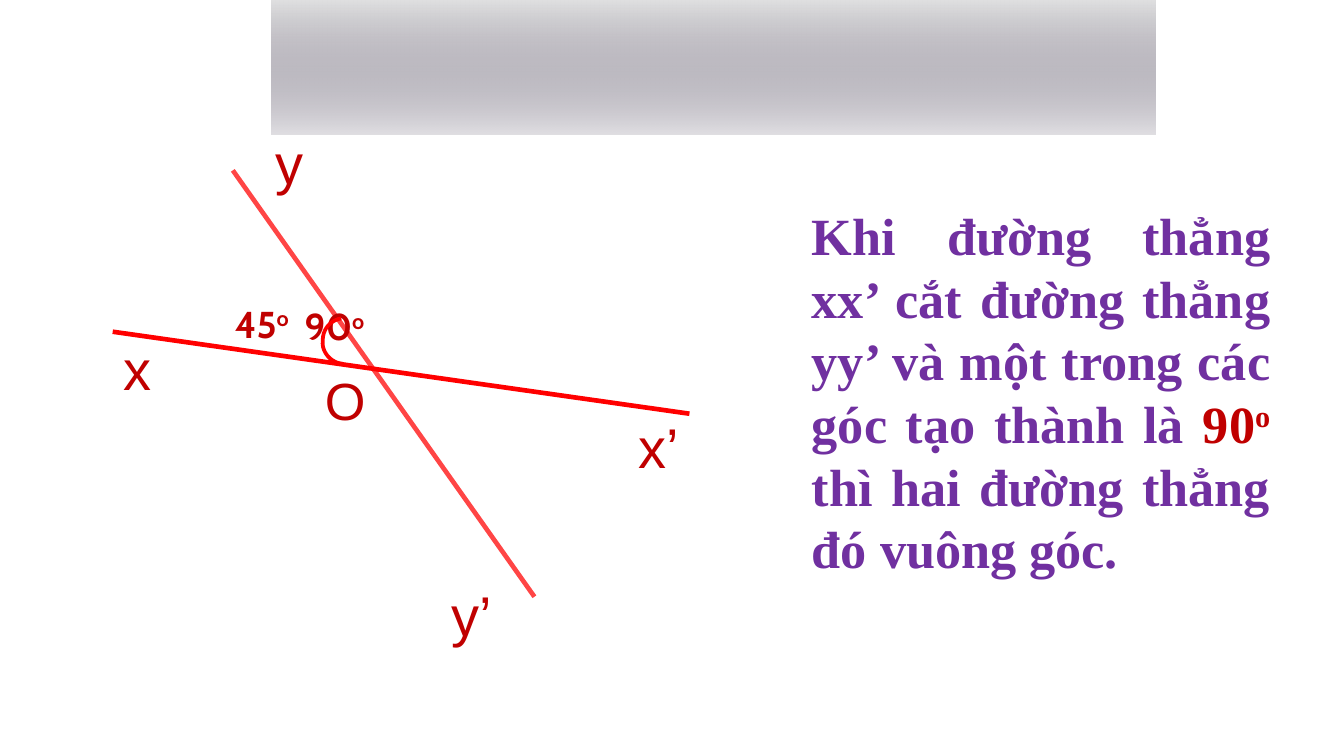
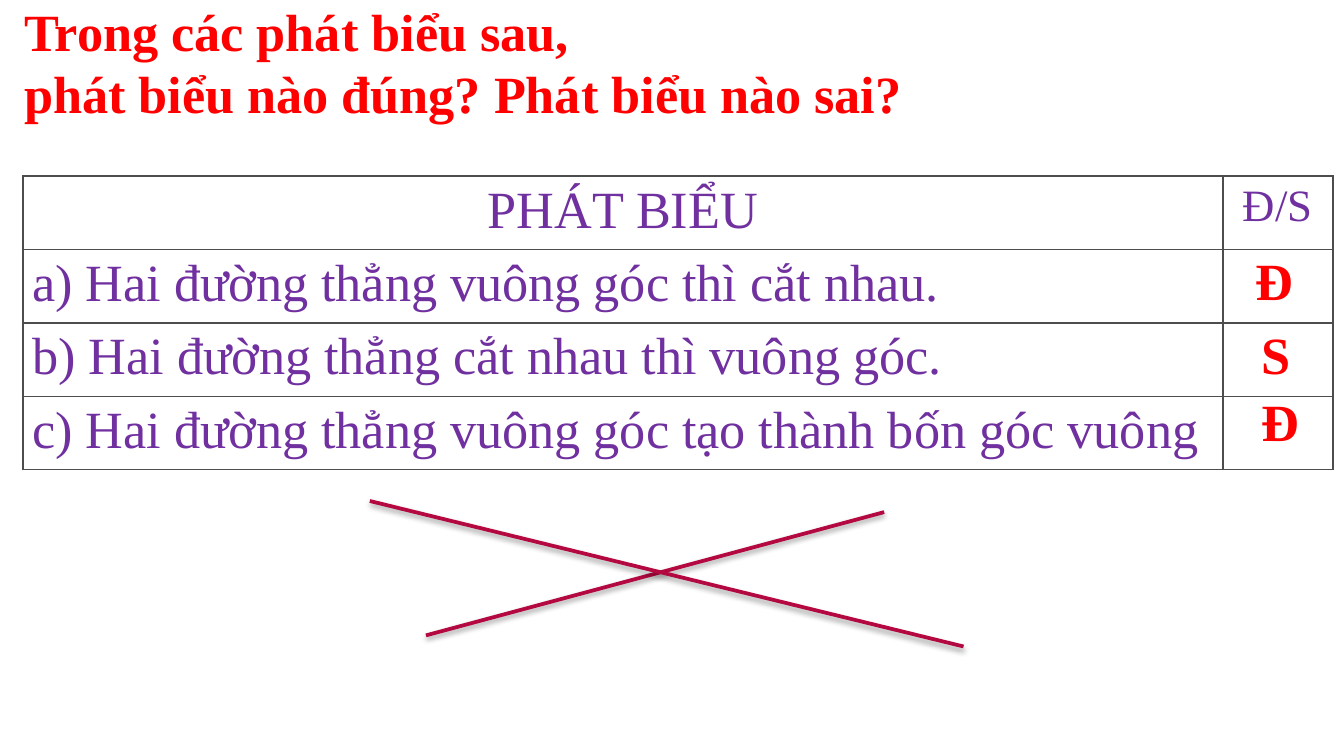
from lxml import etree
from pptx import Presentation
from pptx.dml.color import RGBColor
from pptx.enum.shapes import MSO_CONNECTOR, MSO_SHAPE
from pptx.enum.text import MSO_ANCHOR, MSO_AUTO_SIZE, PP_ALIGN
from pptx.oxml.ns import qn
from pptx.util import Cm, Pt

STRAIGHT = MSO_CONNECTOR.STRAIGHT
RECTANGLE = MSO_SHAPE.RECTANGLE
TOP = MSO_ANCHOR.TOP
GROW = MSO_AUTO_SIZE.SHAPE_TO_FIT_TEXT
LEFT, CENTER, JUSTIFY = PP_ALIGN.LEFT, PP_ALIGN.CENTER, PP_ALIGN.JUSTIFY

COLORS = {
    "red": "FF0000",
    "dark_red": "C00000",
    "purple": "7030A0",
    "crimson": "B40940",
    "border": "4D4D4D",
    "band_top": "E0E0E1",
    "band_bottom": "382E46",
    "shadow": "000000",
}
SERIF = "Times New Roman"
STYLES = {
    "axis": {"name": "Arial", "size": Pt(30), "color": "dark_red"},
    "origin": {"name": "Arial", "size": Pt(28), "color": "dark_red"},
    "angle": {"name": "Cabin", "size": Pt(20), "bold": True, "color": "dark_red"},
    "rule": {"name": SERIF, "size": Pt(28), "bold": True, "color": "purple"},
    "degree": {"name": SERIF, "size": Pt(28), "bold": True, "color": "dark_red"},
    "strong": {"name": SERIF, "size": Pt(28), "bold": True, "color": "red"},
    "cell": {"name": SERIF, "size": Pt(28), "color": "purple"},
    "cell_small": {"name": SERIF, "size": Pt(24), "color": "purple"},
}

LINE_YY = (4.4, 3.22, 10.1, 11.28)
LINE_XX = (2.13, 6.27, 13.03, 7.82)
POINT_LABELS = [
    ("x", "axis", (2.08, 6.2, 1.47, 1.52)),
    ("x’", "axis", (11.81, 7.67, 1.47, 1.52)),
    ("y", "axis", (4.95, 2.31, 1.47, 1.52)),
    ("y’", "axis", (8.28, 10.85, 1.45, 1.55)),
    ("O", "origin", (5.89, 6.83, 1.07, 1.45)),
]
ANGLE_LABELS = [("90", (5.51, 5.61, 1.9, 1.09)), ("45", (4.19, 5.56, 1.9, 1.09))]
ANGLE_CURVES = [
    ((6.48, 6.88), (6.25, 6.86), (6.07, 6.65), (6.1, 6.43)),
    ((6.1, 6.43), (6.1, 6.22), (6.25, 6.05), (6.45, 6.02)),
]
CURVE_STEPS = 10
RULE_BOX = (15.09, 3.71, 9.17, 7.44)
RULE = [
    ("Khi đường thẳng xx’ cắt đường thẳng yy’ và một trong các góc tạo thành là ", "rule", False),
    ("90", "degree", False),
    ("o ", "degree", True),
    ("thì hai đường thẳng đó vuông góc.", "rule", False),
]
BAND_BOX = (5.13, 0, 16.71, 2.54)

QUESTION_BOX = (0.2, -0.15, 19.69, 2.64)
QUESTION = ["Trong các phát biểu sau,", "phát biểu nào đúng? Phát biểu nào sai?"]
TABLE_AT = (0.43, 3.33)
COLUMN_WIDTHS = (22.68, 2.08)
ROW_HEIGHT = 1.38
HEADINGS = [("PHÁT BIỂU", "cell"), ("Đ/S", "cell_small")]
STATEMENTS = [
    "a) Hai đường thẳng vuông góc thì cắt nhau.",
    "b) Hai đường thẳng cắt nhau thì vuông góc.",
    "c) Hai đường thẳng vuông góc tạo thành bốn góc vuông",
]
ANSWERS = [
    ("Đ", (23.47, 4.57, 1.24, 1.45)),
    ("S", (23.6, 5.97, 1.07, 1.45)),
    ("Đ", (23.6, 7.24, 1.24, 1.45)),
]
CROSSED_LINES = [(8.05, 12.01, 16.71, 9.68), (6.99, 9.47, 18.21, 12.22)]


def rgb(color):
    return RGBColor.from_string(COLORS[color])


def lengths(values):
    return [Cm(value) for value in values]


def child(parent, tag, **attributes):
    return etree.SubElement(parent, qn(tag), {k: str(v) for k, v in attributes.items()})


def set_alpha(color_element, percent):
    child(color_element, "a:alpha", val=percent * 1000)


def add_run(paragraph, text, style, raised=False):
    run = paragraph.add_run()
    run.text = text
    for key, value in STYLES[style].items():
        if key == "color":
            run.font.color.rgb = rgb(value)
        else:
            setattr(run.font, key, value)
    if raised:
        run._r.get_or_add_rPr().set("baseline", "30000")


def add_label(slide, box, parts, wrap=True):
    frame = slide.shapes.add_textbox(*lengths(box)).text_frame
    frame.word_wrap = wrap
    frame.auto_size = GROW
    for part in parts:
        add_run(frame.paragraphs[0], *part)


def fill_placeholder(placeholder, box, paragraphs, alignment):
    for key, value in zip(("left", "top", "width", "height"), lengths(box)):
        setattr(placeholder, key, value)
    frame = placeholder.text_frame
    frame.word_wrap = True
    frame.auto_size = GROW
    frame.vertical_anchor = TOP
    for index, parts in enumerate(paragraphs):
        paragraph = frame.add_paragraph() if index else frame.paragraphs[0]
        paragraph.alignment = alignment
        paragraph.space_before = Pt(0)
        properties = paragraph._p.get_or_add_pPr()
        properties.set("marL", "0")
        properties.set("indent", "0")
        child(properties, "a:buNone")
        for part in parts:
            add_run(paragraph, *part)


def add_line(slide, ends, color, width, opacity=None, shadow=False):
    connector = slide.shapes.add_connector(STRAIGHT, *lengths(ends))
    connector.line.color.rgb = rgb(color)
    connector.line.width = Pt(width)
    properties = connector.element.spPr
    if opacity:
        set_alpha(next(properties.iter(qn("a:srgbClr"))), opacity)
    effects = child(properties, "a:effectLst")
    if shadow:
        outer = child(effects, "a:outerShdw", blurRad=Pt(3.1), dist=Pt(1.6),
                      dir=90 * 60000, rotWithShape=0)
        set_alpha(child(outer, "a:srgbClr", val=COLORS["shadow"]), 38)


def curve_point(curve, t):
    weights = ((1 - t) ** 3, 3 * t * (1 - t) ** 2, 3 * t ** 2 * (1 - t), t ** 3)
    return tuple(Cm(sum(w * point[axis] for w, point in zip(weights, curve)))
                 for axis in (0, 1))


def add_angle_mark(slide):
    points = [curve_point(curve, step / CURVE_STEPS)
              for curve in ANGLE_CURVES for step in range(1, CURVE_STEPS + 1)]
    builder = slide.shapes.build_freeform(*lengths(ANGLE_CURVES[0][0]))
    builder.add_line_segments(points, close=False)
    mark = builder.convert_to_shape()
    mark.shadow.inherit = False
    mark.fill.background()
    mark.line.color.rgb = rgb("red")
    mark.line.width = Pt(2)


def add_band(slide):
    band = slide.shapes.add_shape(RECTANGLE, *lengths(BAND_BOX))
    band.shadow.inherit = False
    band.line.fill.background()
    band.fill.gradient()
    band.fill.gradient_angle = 270
    for position, (stop, color) in enumerate(
            zip(band.fill.gradient_stops, ("band_top", "band_bottom"))):
        stop.position = position
        stop.color.rgb = rgb(color)
    set_alpha(list(band.element.spPr.iter(qn("a:srgbClr")))[-1], 15)


def format_cell(cell):
    for side in ("left", "right"):
        setattr(cell, f"margin_{side}", Cm(0.18))
    for side in ("top", "bottom"):
        setattr(cell, f"margin_{side}", Cm(0.1))
    properties = cell._tc.get_or_add_tcPr()
    for side in "LRTB":
        border = child(properties, f"a:ln{side}", w=Pt(1))
        child(child(border, "a:solidFill"), "a:srgbClr", val=COLORS["border"])
    cell.fill.background()


def add_statement_table(slide):
    rows = [HEADINGS] + [[(statement, "cell")] for statement in STATEMENTS]
    size = (sum(COLUMN_WIDTHS), ROW_HEIGHT * len(rows))
    table = slide.shapes.add_table(
        len(rows), len(COLUMN_WIDTHS), *lengths(TABLE_AT + size)).table
    table.first_row = table.horz_banding = False
    for column, width in zip(table.columns, COLUMN_WIDTHS):
        column.width = Cm(width)
    for cell in table.iter_cells():
        format_cell(cell)
    for r, row in enumerate(rows):
        table.rows[r].height = Cm(ROW_HEIGHT)
        for c, part in enumerate(row):
            paragraph = table.cell(r, c).text_frame.paragraphs[0]
            paragraph.alignment = LEFT if r else CENTER
            add_run(paragraph, *part)


def build_angle_slide(deck):
    slide = deck.slides.add_slide(deck.slide_layouts[1])
    title = slide.shapes.title.element
    title.getparent().remove(title)
    add_line(slide, LINE_YY, "red", 2.5, opacity=73)
    add_line(slide, LINE_XX, "red", 2.5)
    for text, style, box in POINT_LABELS:
        add_label(slide, box, [(text, style)])
    for degrees, box in ANGLE_LABELS:
        add_label(slide, box, [(degrees, "angle"), ("o", "angle", True)])
    add_angle_mark(slide)
    fill_placeholder(slide.placeholders[1], RULE_BOX, [RULE], JUSTIFY)
    add_band(slide)


def build_question_slide(deck):
    slide = deck.slides.add_slide(deck.slide_layouts[5])
    fill_placeholder(slide.shapes.title, QUESTION_BOX,
                     [[(line, "strong")] for line in QUESTION], LEFT)
    add_statement_table(slide)
    for answer, box in ANSWERS:
        add_label(slide, box, [(answer, "strong")], wrap=False)
    for ends in CROSSED_LINES:
        add_line(slide, ends, "crimson", 2, shadow=True)


def main():
    deck = Presentation()
    deck.slide_width, deck.slide_height = lengths((25.4, 14.29))
    build_angle_slide(deck)
    build_question_slide(deck)
    deck.save("out.pptx")


if __name__ == "__main__":
    main()
